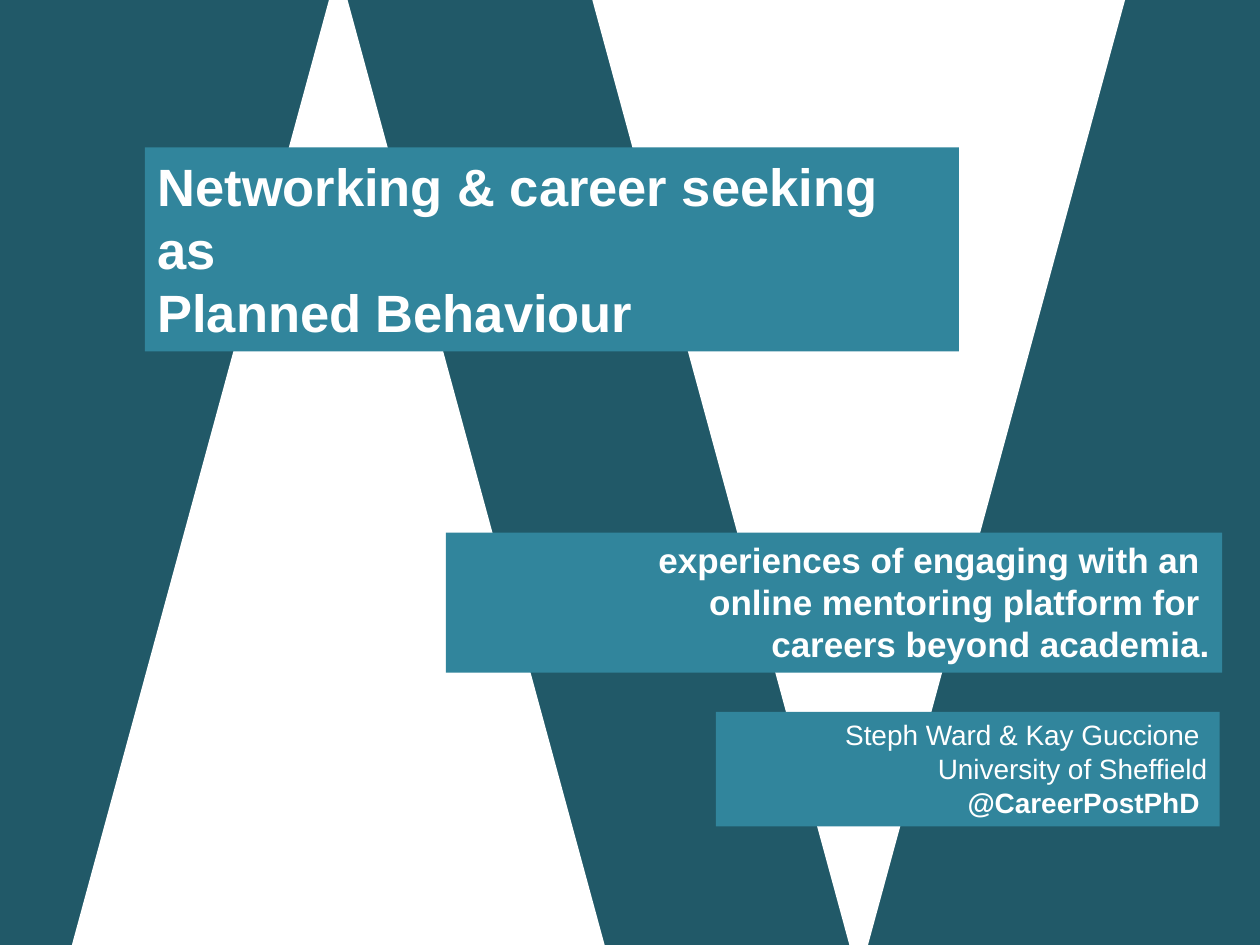
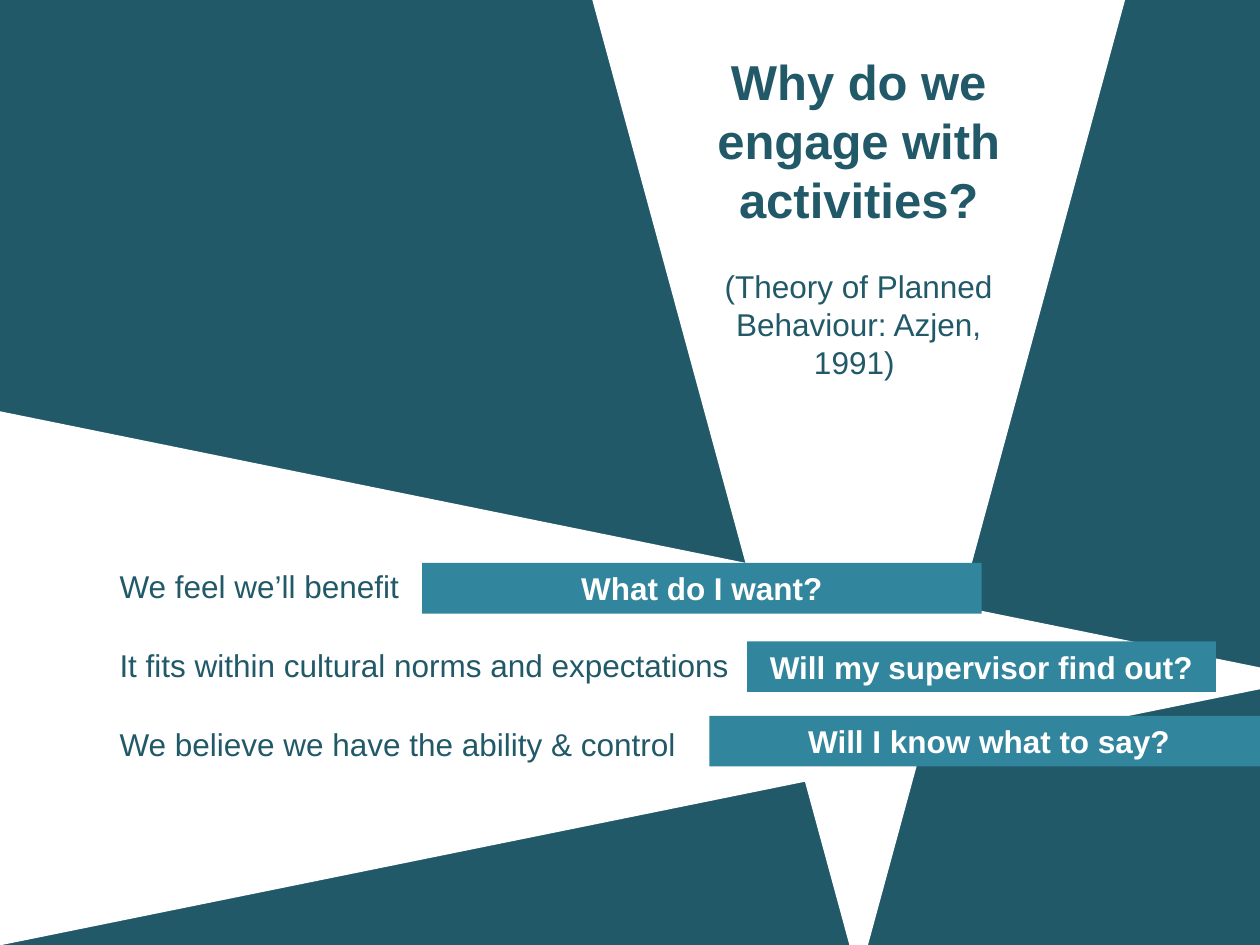
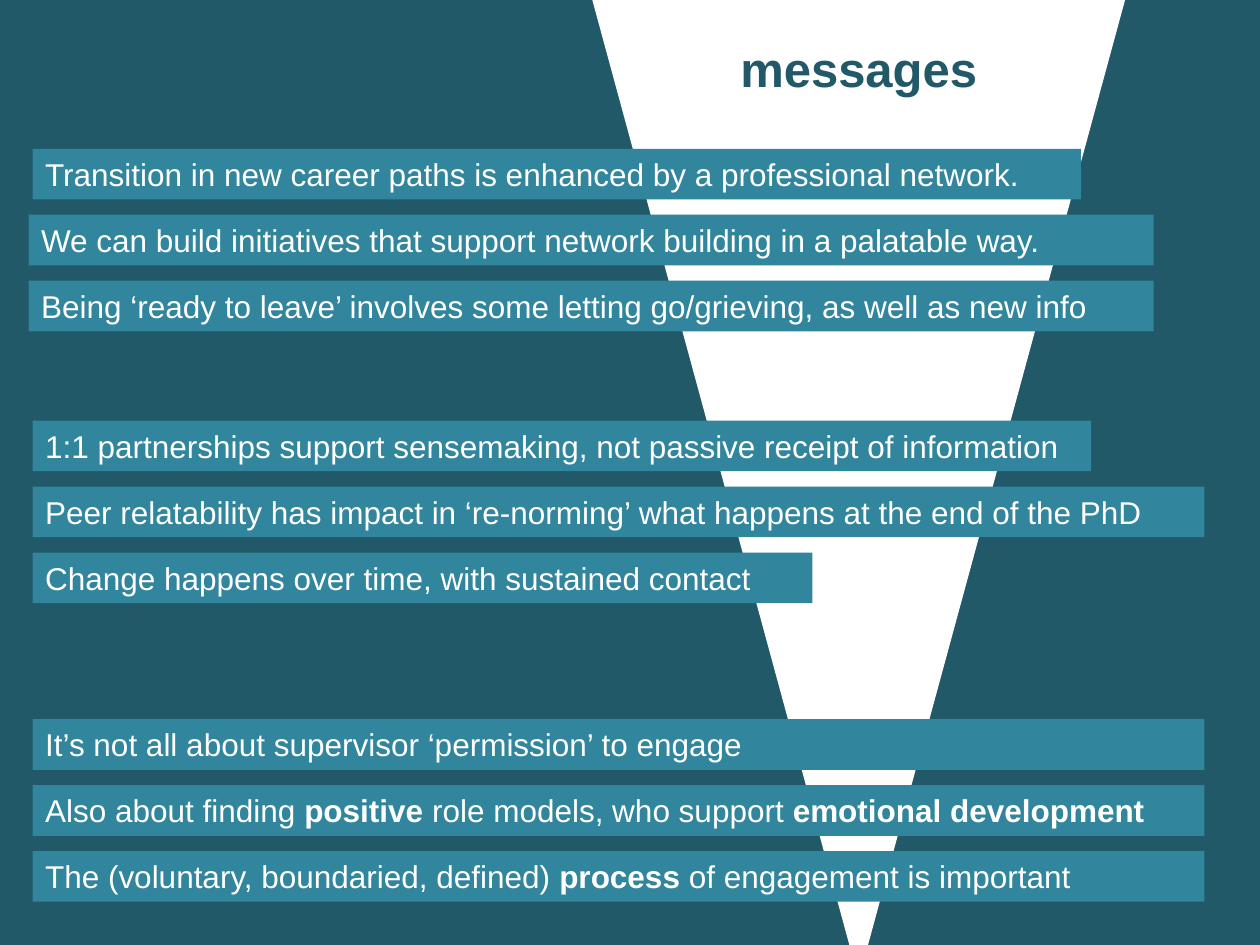
from pptx import Presentation
from pptx.dml.color import RGBColor
from pptx.enum.shapes import MSO_SHAPE
from pptx.enum.text import MSO_ANCHOR, MSO_AUTO_SIZE, PP_ALIGN
from pptx.util import Cm, Pt

TRIANGLE = MSO_SHAPE.ISOSCELES_TRIANGLE
RECTANGLE = MSO_SHAPE.RECTANGLE
TOP = MSO_ANCHOR.TOP
GROW = MSO_AUTO_SIZE.SHAPE_TO_FIT_TEXT
LEFT, CENTER, RIGHT = PP_ALIGN.LEFT, PP_ALIGN.CENTER, PP_ALIGN.RIGHT

COLORS = {"dark": "215968", "band": "31859C", "white": "FFFFFF"}
FONT = "Arial"
TITLE_ONLY = 5
BODY_SIZE = 18
TITLE_SIZE = 28
LINE_HEIGHT = 1.02

RISING_BEAM = (1.45, -0.69, 10.74, 19.74)
FALLING_BEAM = (11.94, 0, 10.74, 19.74)
SIDE_BEAM = (7.85, 0.43, 10.77, 26.49)


def color(name):
    return RGBColor.from_string(COLORS[name])


def plain(*lines, bold=False):
    return [[(line, bold)] for line in lines]


def write_text(shape, paragraphs, size, color_name, alignment):
    frame = shape.text_frame
    frame.word_wrap = True
    frame.auto_size = GROW
    frame.vertical_anchor = TOP
    for index, runs in enumerate(paragraphs):
        paragraph = frame.add_paragraph() if index else frame.paragraphs[0]
        paragraph.alignment = alignment
        for text, bold in runs:
            run = paragraph.add_run()
            run.text = text
            run.font.name = FONT
            run.font.size = Pt(size)
            run.font.bold = bold
            run.font.color.rgb = color(color_name)


def fill_shape(shape, color_name):
    shape.fill.solid()
    shape.fill.fore_color.rgb = color(color_name)
    shape.line.fill.background()


def add_filled(slide, kind, box, color_name):
    shape = slide.shapes.add_shape(kind, *map(Cm, box))
    shape.shadow.inherit = False
    fill_shape(shape, color_name)
    return shape


def add_beam(slide, box, rotation=0):
    add_filled(slide, TRIANGLE, box, "white").rotation = rotation


def add_band(slide, box, paragraphs, size=BODY_SIZE, alignment=LEFT):
    shape = add_filled(slide, RECTANGLE, box, "band")
    write_text(shape, paragraphs, size, "white", alignment)


def add_label(slide, box, text, alignment=LEFT):
    shape = slide.shapes.add_textbox(*map(Cm, box))
    write_text(shape, plain(text), BODY_SIZE, "dark", alignment)


def place_title(slide, box, lines, size=TITLE_SIZE, color_name="dark", alignment=CENTER):
    title = slide.shapes.title
    title.left, title.top, title.width, title.height = map(Cm, box)
    write_text(title, plain(*lines, bold=True), size, color_name, alignment)
    slide.shapes.element.append(title.element)
    return title


def add_slide(presentation):
    return presentation.slides.add_slide(presentation.slide_layouts[TITLE_ONLY])


def build_cover(presentation):
    slide = add_slide(presentation)
    add_beam(slide, RISING_BEAM)
    add_beam(slide, FALLING_BEAM, 180)
    title = place_title(
        slide, (2.92, 2.97, 16.41, 4.11),
        ["Networking & career seeking as", "Planned Behaviour"],
        30, "white", LEFT)
    fill_shape(title, "band")
    authors = plain("Steph Ward & Kay Guccione ", "University of Sheffield")
    handle = plain("@CareerPostPhD ", bold=True)
    add_band(slide, (14.43, 14.35, 10.16, 2.31), authors + handle, 16, RIGHT)
    subtitle = plain(
        "experiences of engaging with an ",
        "online mentoring platform for ",
        "careers beyond academia.", bold=True)
    add_band(slide, (8.99, 10.74, 15.65, 2.82), subtitle, 20, RIGHT)


def build_reasons(presentation):
    slide = add_slide(presentation)
    add_beam(slide, SIDE_BEAM, 90)
    add_beam(slide, FALLING_BEAM, 180)
    place_title(slide, (13.87, 0.91, 6.88, 3.81), ["Why do we engage with activities?"])
    add_label(slide, (13.87, 5.26, 6.88, 2.57),
              "(Theory of Planned Behaviour: Azjen, 1991) ", CENTER)
    questions = [
        (8.51, 11.35, 11.28, "What do I want?"),
        (15.06, 12.93, 9.45, "Will my supervisor find out?"),
        (14.3, 14.43, 11.28, "Will I know what to say?"),
    ]
    for left, top, width, text in questions:
        add_band(slide, (left, top, width, LINE_HEIGHT),
                 plain(text, bold=True), alignment=CENTER)
    reasons = [
        (6.86, "We feel we’ll benefit"),
        (13.21, "It fits within cultural norms and expectations"),
        (13.21, "We believe we have the ability & control"),
    ]
    for row, (width, text) in enumerate(reasons):
        add_label(slide, (2.16, 11.3 + row * 1.6, width, LINE_HEIGHT), text)


def build_messages(presentation):
    slide = add_slide(presentation)
    add_beam(slide, FALLING_BEAM, 180)
    place_title(slide, (13.87, 0.64, 6.88, 1.45), ["messages"])
    groups = [
        (3, [
            (0.66, 21.13, plain("Transition in new career paths is enhanced by a professional network.")),
            (0.58, 22.68, plain("We can build initiatives that support network building in a palatable way.")),
            (0.58, 22.68, plain("Being ‘ready to leave’ involves some letting go/grieving, as well as new info")),
        ]),
        (8.48, [
            (0.66, 21.34, plain("1:1 partnerships support sensemaking, not passive receipt of information")),
            (0.66, 23.62, plain("Peer relatability has impact in ‘re-norming’ what happens at the end of the PhD")),
            (0.66, 15.72, plain("Change happens over time, with sustained contact")),
        ]),
        (14.5, [
            (0.66, 23.62, plain("It’s not all about supervisor ‘permission’ to engage")),
            (0.66, 23.62, [[("Also about finding ", False), ("positive", True),
                            (" role models, who support ", False),
                            ("emotional development", True)]]),
            (0.66, 23.62, [[("The (voluntary, boundaried, defined) ", False),
                            ("process", True),
                            (" of engagement is important", False)]]),
        ]),
    ]
    for top, messages in groups:
        for row, (left, width, paragraphs) in enumerate(messages):
            add_band(slide, (left, top + row * 1.33, width, LINE_HEIGHT), paragraphs)


def main():
    presentation = Presentation()
    presentation.slide_width = Cm(25.4)
    presentation.slide_height = Cm(19.05)
    background = presentation.slide_master.background.fill
    background.solid()
    background.fore_color.rgb = color("dark")
    build_cover(presentation)
    build_reasons(presentation)
    build_messages(presentation)
    presentation.save("out.pptx")


if __name__ == "__main__":
    main()
